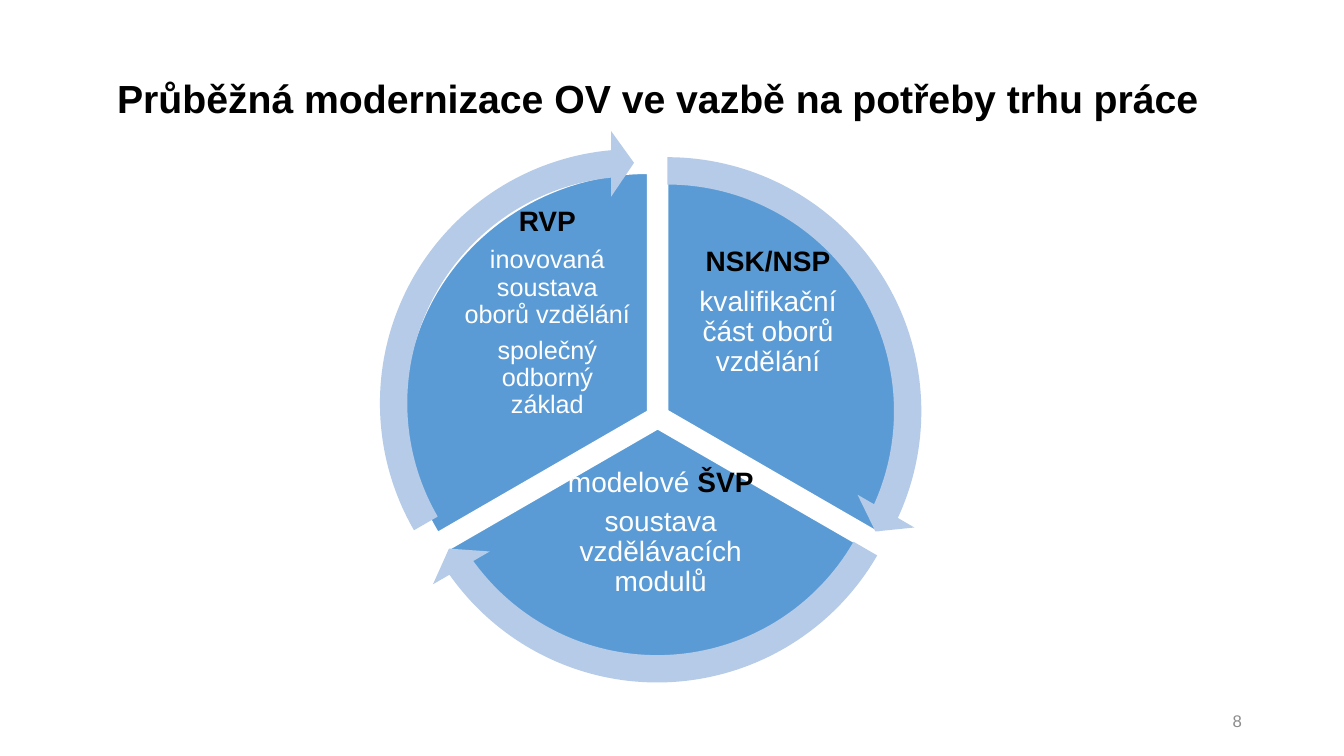
"""Build a slide with a three-part cycle of vocational education modernisation."""
from typing import NamedTuple

from pptx import Presentation
from pptx.dml.color import RGBColor
from pptx.enum.shapes import MSO_SHAPE
from pptx.enum.text import MSO_ANCHOR, MSO_AUTO_SIZE, PP_ALIGN
from pptx.util import Pt

BLACK = RGBColor(0, 0, 0)
WHITE = RGBColor(0xFF, 0xFF, 0xFF)
GRAY = RGBColor(0x8C, 0x8C, 0x8C)
BLUE = RGBColor(0x5B, 0x9B, 0xD5)
PALE_BLUE = RGBColor(0xB5, 0xCB, 0xE7)

FONT = "Arial"
INSET = 2.16
LABEL_LIFT = 45
SWEEP = 120
FIRST_ANGLE = 270
HEAD_ANGLE = 5.46
ANGLE_UNIT = 0.6
ARROW_SIZE = 390.24


class Box(NamedTuple):
    """Left, top, width and height in points."""
    left: float
    top: float
    width: float
    height: float


class Run(NamedTuple):
    """A piece of text in one format."""
    text: str
    size: float = 20
    color: RGBColor = WHITE
    bold: bool = False


class Para(NamedTuple):
    """A paragraph of runs and the space after it."""
    runs: list[Run]
    after: float = 0


class Sector(NamedTuple):
    """One third of the cycle with its label and arrow."""
    pie: Box
    arrow_at: tuple[float, float]
    label: Box
    paras: list[Para]


SECTORS = [
    Sector(Box(303.12, 119.52, 347.76, 347.76), (281.52, 98.64),
           Box(486.72, 193.68, 123.84, 103.68),
           [Para([Run("NSK/NSP", color=BLACK, bold=True)], 7),
            Para([Run("kvalifikační část oborů vzdělání")])]),
    Sector(Box(295.92, 132.48, 347.76, 347.76), (274.32, 110.88),
           Box(378.72, 357.84, 186.48, 90.72),
           [Para([Run("modelové "), Run("ŠVP", color=BLACK, bold=True)], 6),
            Para([Run("soustava vzdělávacích modulů")])]),
    Sector(Box(288.72, 123.84, 347.76, 339.84), (257.76, 92.88),
           Box(329.04, 195.84, 123.84, 100.8),
           [Para([Run("RVP", color=BLACK, bold=True)], 7),
            Para([Run("inovovaná soustava oborů vzdělání", 18)], 6.3),
            Para([Run("společný odborný základ", 18)])]),
]


def points(box: Box) -> list[Pt]:
    """Turn a box into lengths."""
    return [Pt(v) for v in box]


def angle(degrees: float) -> float:
    """Turn degrees into an adjustment value."""
    return degrees % 360 * ANGLE_UNIT


def write(tf, paras: list[Para], align=PP_ALIGN.CENTER, spacing: float = 0.9) -> None:
    """Fill a text frame with formatted paragraphs."""
    frame = {"word_wrap": True, "auto_size": MSO_AUTO_SIZE.NONE,
             "vertical_anchor": MSO_ANCHOR.MIDDLE}
    for name, value in frame.items():
        setattr(tf, name, value)
    for i, para in enumerate(paras):
        p = tf.add_paragraph() if i else tf.paragraphs[0]
        layout = {"alignment": align, "line_spacing": spacing,
                  "space_before": Pt(0), "space_after": Pt(para.after)}
        for name, value in layout.items():
            setattr(p, name, value)
        for run in para.runs:
            r = p.add_run()
            r.text = run.text
            style = {"name": FONT, "size": Pt(run.size), "bold": run.bold}
            for name, value in style.items():
                setattr(r.font, name, value)
            r.font.color.rgb = run.color


def add_part(shapes, kind: MSO_SHAPE, box: Box, color: RGBColor, values: list[float]):
    """Add a flat adjusted shape without an outline."""
    s = shapes.add_shape(kind, *points(box))
    s.shadow.inherit = False
    s.fill.solid()
    s.fill.fore_color.rgb = color
    s.line.fill.background()
    for i, value in enumerate(values):
        s.adjustments[i] = value
    return s


def add_sector(shapes, sector: Sector, start: float) -> None:
    """Add a pie sector and its label."""
    pie = add_part(shapes, MSO_SHAPE.PIE, sector.pie, BLUE,
                   [angle(start), angle(start + SWEEP)])
    pie.line.color.rgb = WHITE
    pie.line.width = Pt(1)
    tf = shapes.add_textbox(*points(sector.label)).text_frame
    insets = {"margin_left": INSET, "margin_right": INSET,
              "margin_top": INSET, "margin_bottom": INSET + LABEL_LIFT}
    for name, value in insets.items():
        setattr(tf, name, Pt(value))
    write(tf, sector.paras)


def add_arrow(shapes, sector: Sector, start: float) -> None:
    """Add the circular arrow along the rim of a sector."""
    box = Box(*sector.arrow_at, ARROW_SIZE, ARROW_SIZE)
    add_part(shapes, MSO_SHAPE.CIRCULAR_ARROW, box, PALE_BLUE,
             [0.05, angle(HEAD_ANGLE), angle(start + SWEEP - HEAD_ANGLE),
              angle(start), 0.06])


def main() -> None:
    """Build and save the slide."""
    prs = Presentation()
    prs.slide_width, prs.slide_height = Pt(960), Pt(540)
    slide = prs.slides.add_slide(prs.slide_layouts[5])

    title = slide.shapes.title
    place = Box(43.2, 49.68, 853.2, 48.96)
    for name, value in zip(place._fields, points(place)):
        setattr(title, name, value)
    heading = "Průběžná modernizace OV ve vazbě na potřeby trhu práce"
    write(title.text_frame, [Para([Run(heading, 28, BLACK, True)])], spacing=0.7)

    number = slide.shapes.add_textbox(*points(Box(678.24, 500.4, 216, 28.8)))
    write(number.text_frame, [Para([Run("8", 12, GRAY)])], PP_ALIGN.RIGHT, 1.0)

    cycle = slide.shapes.add_group_shape().shapes
    for add in (add_sector, add_arrow):
        for i, sector in enumerate(SECTORS):
            add(cycle, sector, FIRST_ANGLE + i * SWEEP)

    prs.save("out.pptx")


if __name__ == "__main__":
    main()
